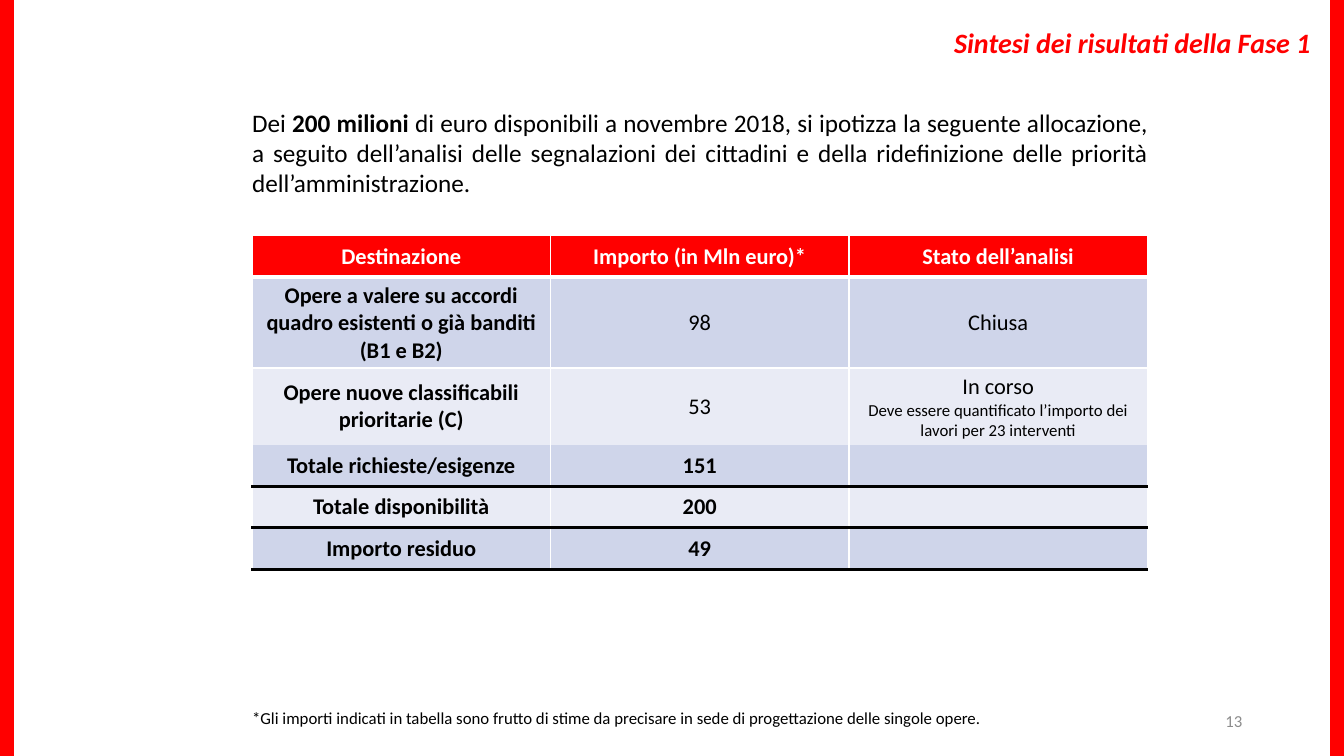
from lxml.etree import SubElement
from pptx import Presentation
from pptx.dml.color import RGBColor
from pptx.enum.shapes import MSO_SHAPE as Shape
from pptx.enum.text import MSO_ANCHOR as Anchor, MSO_AUTO_SIZE as AutoSize, PP_ALIGN as Align
from pptx.oxml.ns import qn
from pptx.util import Pt

PX = 9144
RED, WHITE, BLACK, GREY = "FF0000", "FFFFFF", "000000", "8C8C8C"
BANDS = ["CFD5EA", "E9EBF5"]


def color(code):
    return RGBColor.from_string(code)


def add_span(para, text, size, ink, bold=False, italic=False):
    span = para.add_run()
    span.text = text
    span.font.name = "Calibri"
    span.font.size = Pt(size)
    span.font.bold = bold
    span.font.italic = italic
    span.font.color.rgb = color(ink)


deck = Presentation()
deck.slide_width, deck.slide_height = 1333 * PX, 750 * PX
page = deck.slides.add_slide(deck.slide_layouts[5])

for left in (0, 1320):
    bar = page.shapes.add_shape(Shape.RECTANGLE, left * PX, 0, 13 * PX, 750 * PX)
    bar.shadow.inherit = False
    bar.fill.solid()
    bar.fill.fore_color.rgb = color(RED)
    bar.line.color.rgb = color(RED)
    bar.line.width = Pt(1)

title = page.shapes.title
title.left, title.top, title.width, title.height = 568 * PX, 17 * PX, 742 * PX, 50 * PX
title.text_frame.auto_size = AutoSize.NONE
title.text_frame.vertical_anchor = Anchor.MIDDLE
para = title.text_frame.paragraphs[0]
para.alignment = Align.RIGHT
add_span(para, "Sintesi dei risultati della Fase 1", 20, RED, True, True)

number = page.shapes.add_textbox(942 * PX, 695 * PX, 300 * PX, 40 * PX)
number.text_frame.word_wrap = True
number.text_frame.vertical_anchor = Anchor.MIDDLE
para = number.text_frame.paragraphs[0]
para.alignment = Align.RIGHT
add_span(para, "13", 12, GREY)

justified = [
    (106, 71, 18, [
        ("Dei ", False),
        ("200 milioni ", True),
        ("di euro disponibili a novembre 2018, si ipotizza la seguente allocazione, "
         "a seguito dell’analisi delle segnalazioni dei cittadini e della ridefinizione "
         "delle priorità dell’amministrazione.", False),
    ]),
    (702, 31, 12, [
        ("*Gli importi indicati in tabella sono frutto di stime da precisare "
         "in sede di progettazione delle singole opere.", False),
    ]),
]
for top, height, size, spans in justified:
    box = page.shapes.add_textbox(250 * PX, top * PX, 889 * PX, height * PX)
    frame = box.text_frame
    frame.word_wrap = True
    frame.margin_left = frame.margin_top = frame.margin_right = frame.margin_bottom = 0
    para = frame.paragraphs[0]
    para.alignment = Align.JUSTIFY
    para.space_after = Pt(10)
    for text, bold in spans:
        add_span(para, text, size, BLACK, bold)

rows = [
    ["Destinazione", "Importo (in Mln euro)*", "Stato dell’analisi"],
    ["Opere a valere su accordi quadro esistenti o già banditi (B1 e B2)", "98", "Chiusa"],
    ["Opere nuove classificabili prioritarie (C)", "53",
     "In corso\nDeve essere quantificato l’importo dei lavori per 23 interventi"],
    ["Totale richieste/esigenze", "151", ""],
    ["Totale disponibilità", "200", ""],
    ["Importo residuo", "49", ""],
]
heights = [41, 90, 76, 41, 41, 41]
side = (WHITE, 1)
rules = [(WHITE, 1), (WHITE, 3), (WHITE, 1), None] + [(BLACK, 2.25)] * 3

table = page.shapes.add_table(6, 3, 250 * PX, 234 * PX, 888 * PX, sum(heights) * PX).table
for column in table.columns:
    column.width = 296 * PX

for r, texts in enumerate(rows):
    table.rows[r].height = heights[r] * PX
    for c, text in enumerate(texts):
        cell = table.cell(r, c)
        cell.vertical_anchor = Anchor.MIDDLE
        properties = cell._tc.get_or_add_tcPr()
        edges = {"a:lnL": side, "a:lnR": side, "a:lnT": rules[r], "a:lnB": rules[r + 1]}
        for tag, edge in edges.items():
            line = SubElement(properties, qn(tag))
            if edge:
                line.set("w", str(Pt(edge[1])))
                SubElement(SubElement(line, qn("a:solidFill")), qn("a:srgbClr")).set("val", edge[0])
            else:
                SubElement(line, qn("a:noFill"))
        cell.fill.solid()
        cell.fill.fore_color.rgb = color(BANDS[(r - 1) % 2] if r else RED)
        if not text:
            continue
        bold = c == 0 or r in (0, 3, 4, 5)
        for i, part in enumerate(text.split("\n")):
            para = cell.text_frame.add_paragraph() if i else cell.text_frame.paragraphs[0]
            para.alignment = Align.CENTER
            add_span(para, part, 12 if i else 16, BLACK if r else WHITE, bold)

deck.save("out.pptx")
